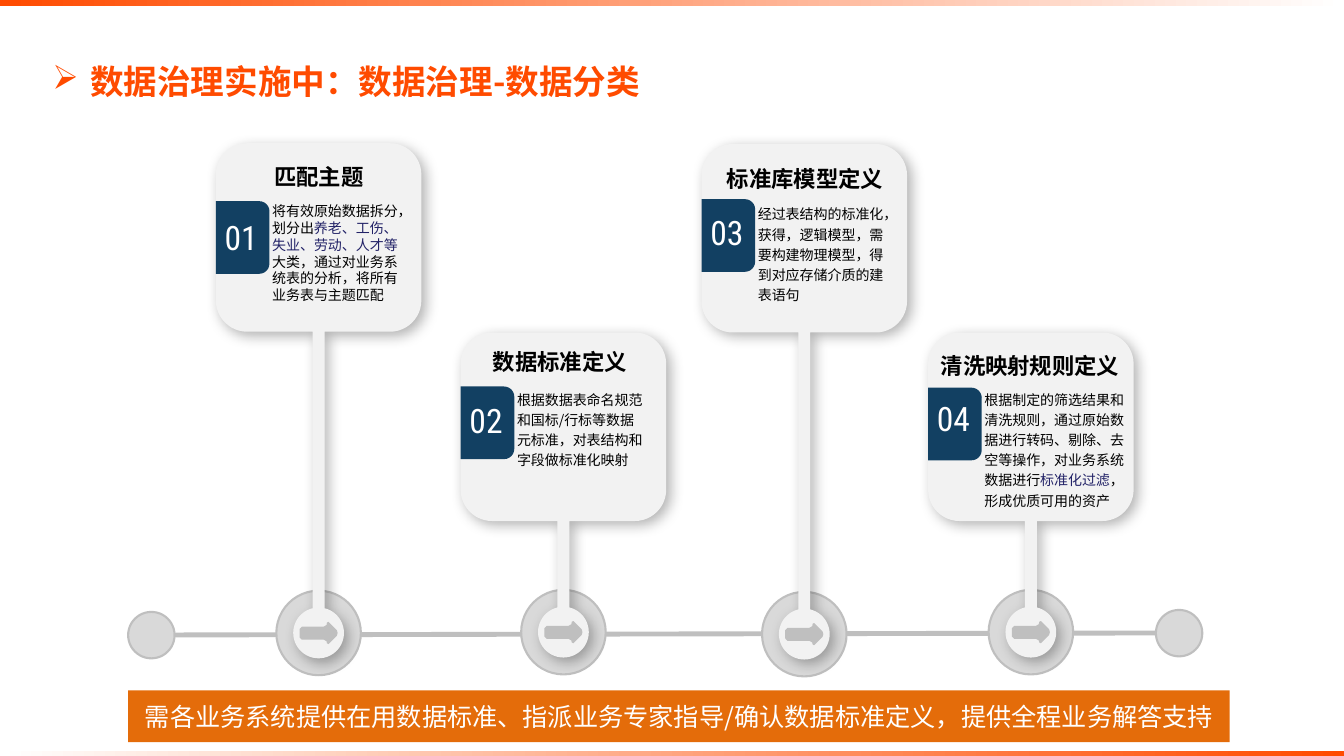
from dataclasses import dataclass
from math import asin, cos, degrees, radians, sin

from lxml.etree import SubElement
from pptx import Presentation
from pptx.dml.color import RGBColor
from pptx.enum.shapes import MSO_CONNECTOR, MSO_SHAPE
from pptx.enum.text import MSO_ANCHOR, PP_ALIGN
from pptx.oxml.ns import qn
from pptx.shapes.autoshape import Shape
from pptx.slide import Slide
from pptx.util import Cm, Pt

CJK = "Noto Sans CJK SC"
DIGITS = "Roboto Condensed"
ORANGE, WHITE, BLACK, INDIGO = "FF4B00", "FFFFFF", "000000", "222267"
NAVY, AMBER = "124062", "E46C0A"
DISC_FILL, CARD_FILL, LINE_GREY = "D9D9D9", "F2F2F2", "BFBFBF"

CARD_WIDTH, CARD_HEIGHT, CORNER = 5.18, 4.75, 0.79
HALF_STEM, KNOB_RADIUS, DISC_SIZE, END_SIZE = 0.15, 0.64, 2.13, 1.17
BADGE_WIDTH, BADGE_HEIGHT = 1.35, 1.83
ARROW = [
    (-0.42, -0.16), (0.13, -0.16), (0.2, -0.2), (0.21, -0.26), (0.25, -0.28),
    (0.46, -0.07), (0.48, 0), (0.46, 0.07), (0.25, 0.28), (0.21, 0.26),
    (0.2, 0.21), (0.13, 0.17), (-0.42, 0.17), (-0.48, 0.11), (-0.48, -0.1),
]

Point = tuple[float, float]


@dataclass(frozen=True)
class Span:
    text: str
    color: str = BLACK
    size: float = 10
    bold: bool = False
    font: str = CJK


@dataclass(frozen=True)
class Step:
    number: str
    title: str
    body: list[Span]
    left: float
    top: float
    node_y: float
    badge_top: float
    number_top: float
    title_left: float
    title_top: float
    body_top: float
    body_width: float = 3.78
    spacing: float = 1.2


STEPS = [
    Step("01", "匹配主题",
         [Span("将有效原始数据拆分，划分出"),
          Span("养老、工伤、失业、劳动、人才等", INDIGO),
          Span("大类，通过对业务系统表的分析，将所有业务表与主题匹配")],
         5.44, 3.61, 15.95, 5.07, 5.33, 5.5, 3.99, 4.98, spacing=1),
    Step("02", "数据标准定义",
         [Span("根据数据表命名规范和国标/行标等数据元标准，对表结构和字段做标准化映射")],
         11.61, 8.38, 15.93, 9.74, 9.96, 11.57, 8.66, 9.65),
    Step("03", "标准库模型定义",
         [Span("经过表结构的标准化，获得，逻辑模型，需要构建物理模型，得到对应存储介质的建表语句")],
         17.68, 3.63, 15.98, 5.02, 5.21, 17.75, 4.04, 4.98),
    Step("04", "清洗映射规则定义",
         [Span("根据制定的筛选结果和清洗规则，通过原始数据进行转码、剔除、去空等操作，对业务系统数据进行"),
          Span("标准化过滤", INDIGO),
          Span("，形成优质可用的资产")],
         23.39, 8.38, 15.93, 9.77, 9.91, 23.42, 8.74, 9.65, 4.06),
]


def rgb(value: str) -> RGBColor:
    return RGBColor.from_string(value)


def paint(shape: Shape, fill: str, line: str | None = None) -> None:
    shape.shadow.inherit = False
    shape.fill.solid()
    shape.fill.fore_color.rgb = rgb(fill)
    if line:
        shape.line.color.rgb = rgb(line)
        shape.line.width = Pt(1.5)
    else:
        shape.line.fill.background()


def add_preset(page: Slide, kind: MSO_SHAPE, left: float, top: float,
               width: float, height: float, fill: str,
               line: str | None = None) -> Shape:
    shape = page.shapes.add_shape(kind, Cm(left), Cm(top), Cm(width), Cm(height))
    paint(shape, fill, line)
    return shape


def add_outline(page: Slide, points: list[Point], fill: str) -> Shape:
    corners = [(Cm(x), Cm(y)) for x, y in points]
    builder = page.shapes.build_freeform(*corners[0])
    builder.add_line_segments(corners[1:], close=True)
    shape = builder.convert_to_shape()
    paint(shape, fill)
    return shape


def write(box: Shape, spans: list[Span], align: PP_ALIGN = PP_ALIGN.LEFT,
          spacing: float = 1, anchor: MSO_ANCHOR = MSO_ANCHOR.TOP,
          wrap: bool = True) -> None:
    frame = box.text_frame
    frame.word_wrap = wrap
    frame.vertical_anchor = anchor
    para = frame.paragraphs[0]
    para.alignment = align
    para.line_spacing = spacing
    for span in spans:
        run = para.add_run()
        run.text = span.text
        run.font.name = span.font
        run.font.size = Pt(span.size)
        run.font.bold = span.bold
        run.font.color.rgb = rgb(span.color)
        SubElement(run.font._element, qn("a:ea"), typeface=span.font)


def add_text(page: Slide, left: float, top: float, width: float, height: float,
             spans: list[Span], align: PP_ALIGN = PP_ALIGN.LEFT,
             spacing: float = 1, anchor: MSO_ANCHOR = MSO_ANCHOR.TOP) -> Shape:
    box = page.shapes.add_textbox(Cm(left), Cm(top), Cm(width), Cm(height))
    write(box, spans, align, spacing, anchor)
    return box


def add_band(page: Slide, top: float, start: str, end: str) -> None:
    band = add_preset(page, MSO_SHAPE.RECTANGLE, 0, top, 33.87, 0.15, start)
    band.fill.gradient()
    band.fill.gradient_angle = 0
    for stop, color in zip(band.fill.gradient_stops, (start, end)):
        stop.color.rgb = rgb(color)


def add_heading(page: Slide) -> None:
    heading = add_text(page, 1.07, 1.02, 32.05, 2.06,
                       [Span("数据治理实施中：数据治理-数据分类", ORANGE, 24, True)],
                       anchor=MSO_ANCHOR.MIDDLE)
    properties = heading.text_frame.paragraphs[0]._p.get_or_add_pPr()
    properties.set("marL", str(Cm(0.95)))
    properties.set("indent", str(-Cm(0.95)))
    SubElement(properties, qn("a:buChar"), char="➢")


def add_timeline(page: Slide) -> None:
    line = page.shapes.add_connector(MSO_CONNECTOR.STRAIGHT,
                                     Cm(4.39), Cm(16), Cm(29.13), Cm(15.95))
    line.line.color.rgb = rgb(LINE_GREY)
    line.line.width = Pt(3.5)
    SubElement(line._element.spPr, qn("a:effectLst"))
    for left, top in ((3.23, 15.42), (29.13, 15.37)):
        add_preset(page, MSO_SHAPE.OVAL, left, top, END_SIZE, END_SIZE,
                   DISC_FILL, LINE_GREY)


def arc(x: float, y: float, radius: float, start: float, end: float,
        count: int = 12) -> list[Point]:
    angles = [radians(start + (end - start) * i / count) for i in range(count + 1)]
    return [(x + radius * cos(a), y + radius * sin(a)) for a in angles]


def card_outline(step: Step, center: float) -> list[Point]:
    left, right = step.left + CORNER, step.left + CARD_WIDTH - CORNER
    bottom = step.top + CARD_HEIGHT
    upper, lower = step.top + CORNER, bottom - CORNER
    gap = degrees(asin(HALF_STEM / KNOB_RADIUS))
    return [
        *arc(left, upper, CORNER, 180, 270),
        *arc(right, upper, CORNER, 270, 360),
        *arc(right, lower, CORNER, 0, 90),
        (center + HALF_STEM, bottom),
        *arc(center, step.node_y, KNOB_RADIUS, gap - 90, 270 - gap, 48),
        (center - HALF_STEM, bottom),
        *arc(left, lower, CORNER, 90, 180),
    ]


def add_shadow(shape: Shape) -> None:
    effects = shape._element.spPr.find(qn("a:effectLst"))
    shadow = SubElement(effects, qn("a:outerShdw"), blurRad=str(Pt(10)),
                        dist=str(Pt(4)), dir="2700000", algn="tl", rotWithShape="0")
    color = SubElement(shadow, qn("a:srgbClr"), val=BLACK)
    SubElement(color, qn("a:alpha"), val="30000")


def add_step(page: Slide, step: Step) -> None:
    center = step.left + CARD_WIDTH / 2
    add_preset(page, MSO_SHAPE.OVAL, center - DISC_SIZE / 2,
               step.node_y - DISC_SIZE / 2, DISC_SIZE, DISC_SIZE,
               DISC_FILL, LINE_GREY)
    add_shadow(add_outline(page, card_outline(step, center), CARD_FILL))
    add_outline(page, [(center + x, step.node_y + y) for x, y in ARROW], LINE_GREY)
    inset = (BADGE_HEIGHT - BADGE_WIDTH) / 2
    badge = add_preset(page, MSO_SHAPE.ROUND_2_SAME_RECTANGLE, step.left - inset,
                       step.badge_top + inset, BADGE_HEIGHT, BADGE_WIDTH, NAVY)
    badge.rotation = 90
    badge.adjustments[0] = 0.19
    add_text(page, step.left - 0.2, step.number_top, 1.68, 1.27,
             [Span(step.number, WHITE, 24, font=DIGITS)], PP_ALIGN.CENTER)
    add_text(page, step.title_left, step.title_top, 5.08, 0.94,
             [Span(step.title, size=16, bold=True)], PP_ALIGN.CENTER)
    add_text(page, step.left + 1.17, step.body_top, step.body_width, 2.82,
             step.body, spacing=step.spacing)


def main() -> None:
    deck = Presentation()
    deck.slide_width, deck.slide_height = Cm(33.87), Cm(19.05)
    page = deck.slides.add_slide(deck.slide_layouts[6])
    add_band(page, 0, ORANGE, WHITE)
    add_band(page, 18.92, WHITE, ORANGE)
    add_heading(page)
    add_timeline(page)
    for step in STEPS:
        add_step(page, step)
    banner = add_preset(page, MSO_SHAPE.RECTANGLE, 3.23, 17.4, 27.76, 1.3, AMBER)
    write(banner, [Span("需各业务系统提供在用数据标准、指派业务专家指导/确认数据标准定义，提供全程业务解答支持",
                        WHITE, 18)],
          PP_ALIGN.CENTER, anchor=MSO_ANCHOR.MIDDLE, wrap=False)
    deck.save("out.pptx")


if __name__ == "__main__":
    main()
